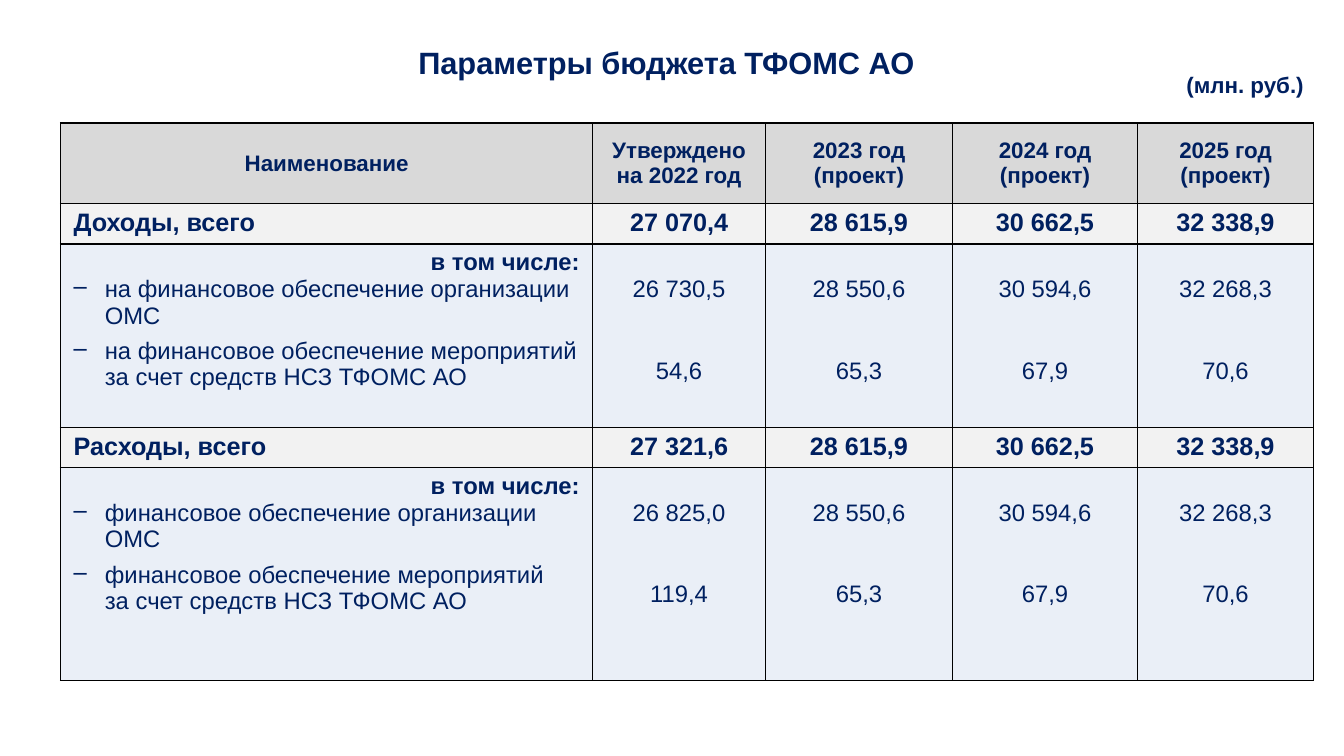
from lxml.etree import SubElement
from pptx import Presentation
from pptx.dml.color import RGBColor
from pptx.enum.text import MSO_ANCHOR as Anchor, PP_ALIGN as Align
from pptx.oxml.ns import qn
from pptx.util import Emu, Pt

NAVY = RGBColor(0x00, 0x20, 0x60)
BLACK = RGBColor(0x00, 0x00, 0x00)
HEADER_GREY = RGBColor(0xD9, 0xD9, 0xD9)
TOTAL_GREY = RGBColor(0xF2, 0xF2, 0xF2)
DETAIL_BLUE = RGBColor(0xEA, 0xEF, 0xF7)

FONT = "Arial"
EMU_PER_PX = 9144  # 100 px to the inch
DETAIL_SIZE = 17
DETAIL_LINE = 27  # height of one line of detail text, px

COLUMN_WIDTHS = [528, 171, 186, 183, 175]
ROW_HEIGHTS = [80, 39, 182, 39, 211]
HEADERS = ["Наименование", "Утверждено\nна 2022 год", "2023 год\n(проект)",
           "2024 год (проект)", "2025 год (проект)"]
HEADER_INSETS = [13, 5, 5, 5, 13]

# Each section: total row, item names, item values per column
SECTIONS = [
    (["Доходы, всего", "27 070,4", "28 615,9", "30 662,5", "32 338,9"],
     ["на финансовое обеспечение организации ОМС",
      "на финансовое обеспечение мероприятий за счет средств НСЗ ТФОМС АО"],
     [("26 730,5", "54,6"), ("28 550,6", "65,3"),
      ("30 594,6", "67,9"), ("32 268,3", "70,6")]),
    (["Расходы, всего", "27 321,6", "28 615,9", "30 662,5", "32 338,9"],
     ["финансовое обеспечение организации ОМС",
      "финансовое обеспечение мероприятий \vза счет средств НСЗ ТФОМС АО"],
     [("26 825,0", "119,4"), ("28 550,6", "65,3"),
      ("30 594,6", "67,9"), ("32 268,3", "70,6")]),
]


def px(length):
    return Emu(length * EMU_PER_PX)


class SlideBuilder:
    def __init__(self, slide):
        self.slide = slide

    def style(self, paragraph, size, bold, align):
        paragraph.alignment = align
        for run in paragraph.runs:
            run.font.name = FONT
            run.font.size = Pt(size)
            run.font.bold = bold
            run.font.color.rgb = NAVY

    def text(self, left, top, width, height, text, size, align, inset_top=5):
        box = self.slide.shapes.add_textbox(px(left), px(top), px(width), px(height))
        frame = box.text_frame
        frame.word_wrap = True
        frame.margin_top = px(inset_top)
        frame.text = text
        self.style(frame.paragraphs[0], size, True, align)

    def table(self, left, top, widths, heights):
        frame = self.slide.shapes.add_table(
            len(heights), len(widths), px(left), px(top), px(sum(widths)), px(sum(heights)))
        table = frame.table
        table.first_row = table.horz_banding = False
        for column, width in zip(table.columns, widths):
            column.width = px(width)
        for row, height in zip(table.rows, heights):
            row.height = px(height)
        return table

    def cell(self, cell, text, size, bold, align, fill, inset=13, top=5, anchor=Anchor.TOP):
        self.borders(cell)
        cell.fill.solid()
        cell.fill.fore_color.rgb = fill
        cell.margin_left = cell.margin_right = px(inset)
        cell.margin_top, cell.margin_bottom = px(top), px(5)
        cell.vertical_anchor = anchor
        cell.text_frame.text = text
        for paragraph in cell.text_frame.paragraphs:
            self.style(paragraph, size, bold, align)

    def borders(self, cell):
        properties = cell._tc.get_or_add_tcPr()
        for side in ("a:lnL", "a:lnR", "a:lnT", "a:lnB"):
            line = SubElement(properties, qn(side), w=str(Pt(1)))
            fill = SubElement(line, qn("a:solidFill"))
            SubElement(fill, qn("a:srgbClr"), val=str(BLACK))

    def dash_item(self, text_frame, text):
        paragraph = text_frame.add_paragraph()
        properties = paragraph._p.get_or_add_pPr()
        properties.set("marL", str(px(31)))
        properties.set("indent", str(px(-31)))
        SubElement(properties, qn("a:buChar"), char="–")
        paragraph.text = text
        paragraph.space_after = Pt(6)
        self.style(paragraph, DETAIL_SIZE, False, Align.LEFT)


def main():
    presentation = Presentation()
    presentation.slide_width, presentation.slide_height = px(1333), px(750)
    builder = SlideBuilder(presentation.slides.add_slide(presentation.slide_layouts[6]))

    # Title
    builder.text(47, 36, 1228, 39, "Параметры бюджета ТФОМС АО", 22, Align.CENTER, inset_top=7)

    # Budget table: header row
    table = builder.table(60, 122, COLUMN_WIDTHS, ROW_HEIGHTS)
    for column, (header, inset) in enumerate(zip(HEADERS, HEADER_INSETS)):
        builder.cell(table.cell(0, column), header, 16, True, Align.CENTER,
                     HEADER_GREY, inset=inset, anchor=Anchor.MIDDLE)

    # Income and expense sections
    for section, (totals, items, values) in enumerate(SECTIONS):
        total_row = 1 + 2 * section
        detail_row = total_row + 1
        for column, total in enumerate(totals):
            align = Align.CENTER if column else Align.LEFT
            builder.cell(table.cell(total_row, column), total, 18, True, align, TOTAL_GREY)

        names = table.cell(detail_row, 0)
        builder.cell(names, "в том числе:", DETAIL_SIZE, True, Align.RIGHT, DETAIL_BLUE)
        for item in items:
            builder.dash_item(names.text_frame, item)

        for column, pair in enumerate(values, start=1):
            cell = table.cell(detail_row, column)
            builder.cell(cell, "\n".join(pair), DETAIL_SIZE, False, Align.CENTER,
                         DETAIL_BLUE, top=5 + DETAIL_LINE)
            cell.text_frame.paragraphs[1].space_before = px(2 * DETAIL_LINE)

    # Unit of measure
    builder.text(1056, 66, 247, 37, "(млн. руб.)", 16, Align.RIGHT)

    presentation.save("out.pptx")


if __name__ == "__main__":
    main()
